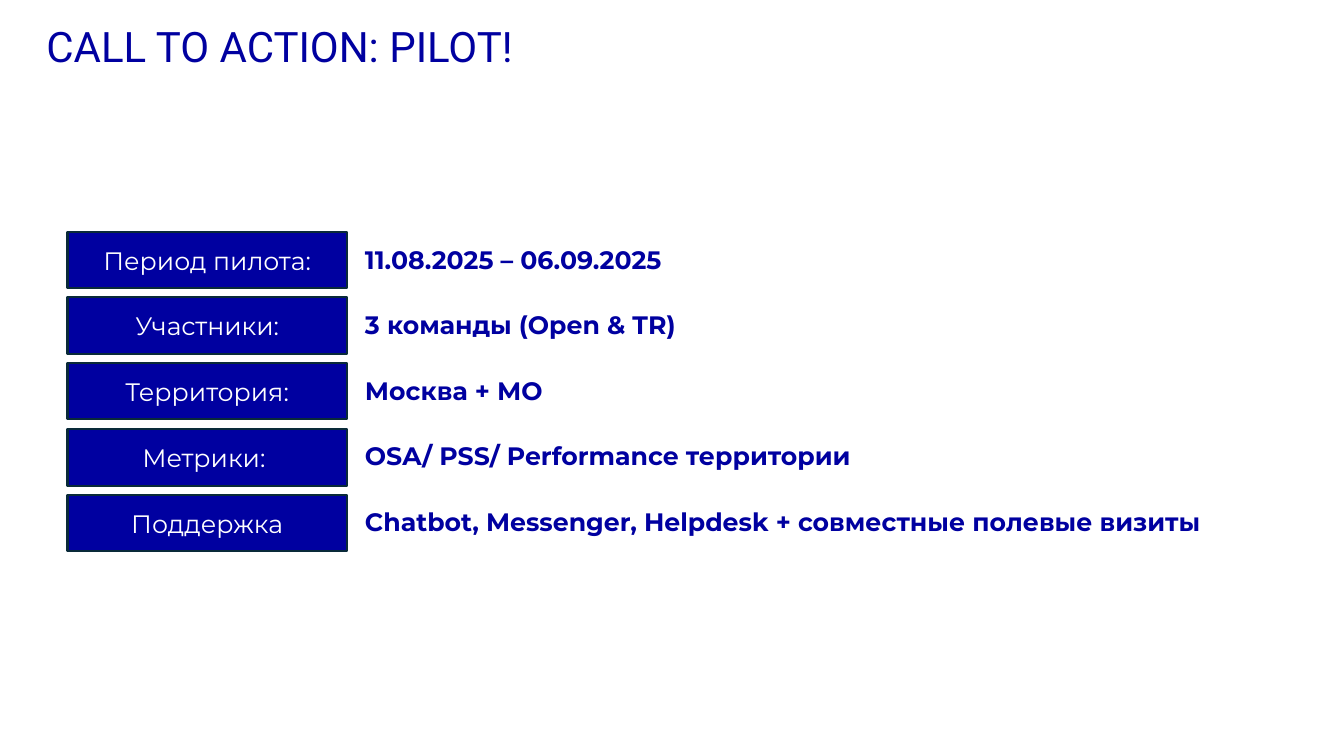
from dataclasses import dataclass

from pptx import Presentation
from pptx import util as u
from pptx.dml.color import RGBColor
from pptx.enum import shapes, text

PX = 9144  # EMU in one px, 100 px to the inch
NAVY, EDGE, WHITE = "0000A0", "092A39", "FFFFFF"
LABEL_TOP, LABEL_PITCH = 230, 65.25
VALUE_TOP, VALUE_PITCH = 247, 65


@dataclass(frozen=True)
class PilotFact:
    label: str
    value: str
    value_width: int = 351
    value_height: int = 34


FACTS = [
    PilotFact("Период пилота:", "11.08.2025 – 06.09.2025"),
    PilotFact("Участники:", "3 команды (Open & TR)"),
    PilotFact("Территория:", "Москва + МО"),
    PilotFact("Метрики: ", "OSA/ PSS/ Performance территории", 743),
    PilotFact("Поддержка", "Chatbot, Messenger, Helpdesk + совместные полевые визиты", 913, 56),
]


def px(count: int) -> u.Emu:
    return u.Emu(count * PX)


def colour(code: str) -> RGBColor:
    return RGBColor.from_string(code)


def add_span(para, words: str, font: str, size: int, code: str, bold: bool = False) -> None:
    span = para.add_run()
    span.text = words
    span.font.name = font
    span.font.size = u.Pt(size)
    span.font.bold = bold
    span.font.color.rgb = colour(code)


def add_text(page, left: int, top: int, width: int, height: int):
    """Add a text box without margins and return its tightly spaced paragraph."""
    frame = page.shapes.add_textbox(px(left), px(top), px(width), px(height)).text_frame
    frame.word_wrap = True
    frame.margin_left = frame.margin_top = frame.margin_right = frame.margin_bottom = 0
    para = frame.paragraphs[0]
    para.line_spacing = 0.83
    return para


def add_label(page, top: int, words: str) -> None:
    box = page.shapes.add_shape(shapes.MSO_SHAPE.RECTANGLE, px(67), px(top), px(277), px(56))
    box.shadow.inherit = False
    box.fill.solid()
    box.fill.fore_color.rgb = colour(NAVY)
    box.line.color.rgb = colour(EDGE)
    box.line.width = u.Pt(1.5)
    box.text_frame.word_wrap = True
    box.text_frame.vertical_anchor = text.MSO_ANCHOR.MIDDLE
    para = box.text_frame.paragraphs[0]
    para.alignment = text.PP_ALIGN.CENTER
    add_span(para, words, "Montserrat", 18, WHITE)


def add_value(page, top: int, fact: PilotFact) -> None:
    para = add_text(page, 362, top, fact.value_width, fact.value_height)
    para.space_before = u.Pt(6)
    add_span(para, fact.value, "Montserrat", 18, NAVY, bold=True)


def main() -> None:
    deck = Presentation()
    deck.slide_width, deck.slide_height = px(1333), px(750)
    page = deck.slides.add_slide(deck.slide_layouts[6])
    title = add_text(page, 46, 29, 1241, 84)
    add_span(title, "CALL TO ACTION: PILOT!", "Roboto", 30, NAVY)
    for row, fact in enumerate(FACTS):
        add_label(page, round(LABEL_TOP + row * LABEL_PITCH), fact.label)
        add_value(page, VALUE_TOP + row * VALUE_PITCH, fact)
    deck.save("out.pptx")


if __name__ == "__main__":
    main()
